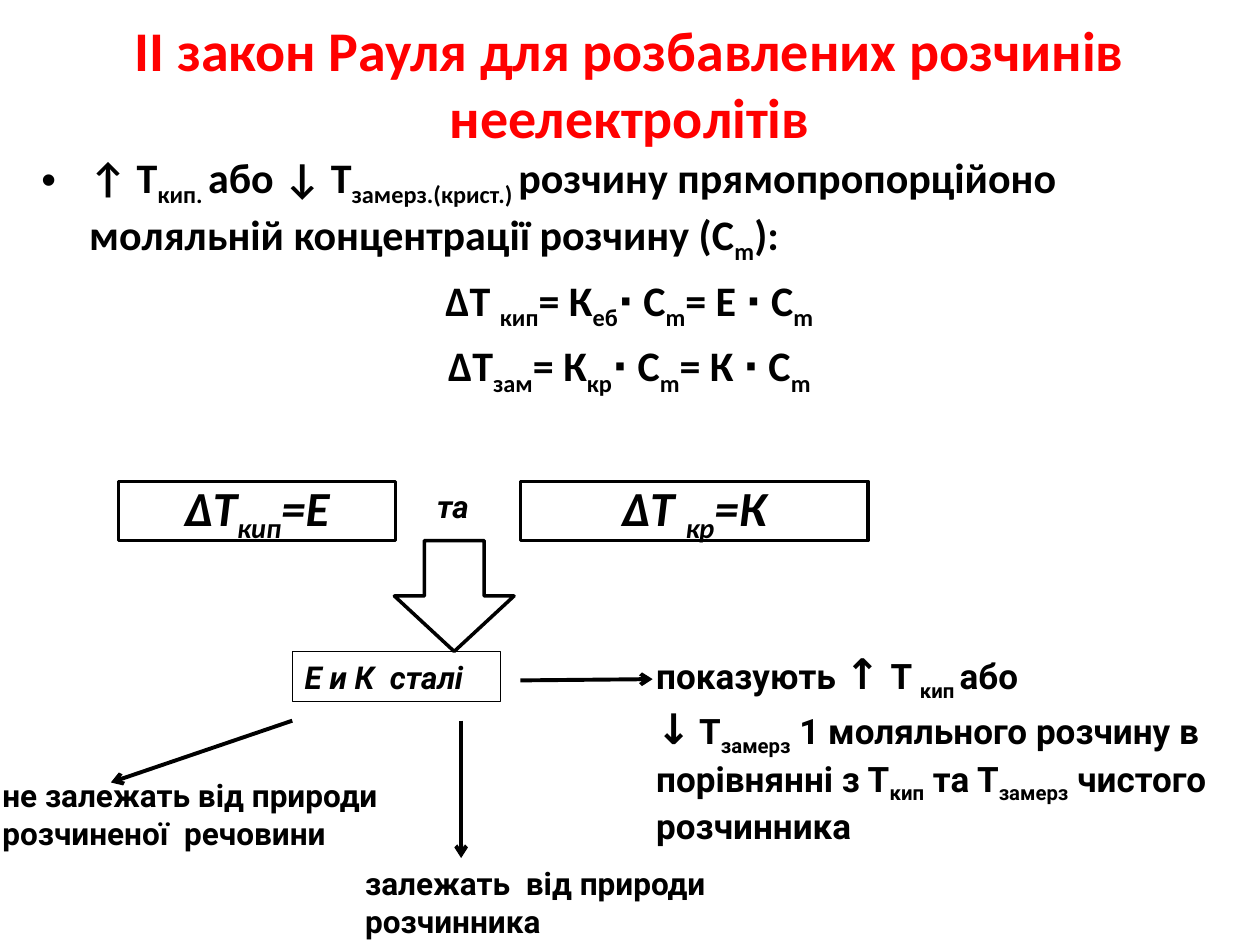
"""Build a slide on the second Raoult law for dilute non-electrolyte solutions."""
from dataclasses import dataclass

from lxml import etree
from pptx import Presentation
from pptx.dml.color import RGBColor
from pptx.enum.shapes import MSO_CONNECTOR, MSO_SHAPE
from pptx.enum.text import MSO_ANCHOR, PP_ALIGN
from pptx.oxml.ns import qn
from pptx.util import Inches, Pt

STRAIGHT = MSO_CONNECTOR.STRAIGHT
RECTANGLE, DOWN_ARROW = MSO_SHAPE.RECTANGLE, MSO_SHAPE.DOWN_ARROW
LEFT, CENTER, JUSTIFY = PP_ALIGN.LEFT, PP_ALIGN.CENTER, PP_ALIGN.JUSTIFY
TOP, MIDDLE = MSO_ANCHOR.TOP, MSO_ANCHOR.MIDDLE
COLORS = {"title": "FF0000", "ink": "000000"}
HEADING_FONT, LABEL_FONT = "Calibri", "Roboto"


@dataclass
class Span:
    text: str
    low: bool = False
    size: float = 0


@dataclass
class Block:
    place: tuple[float, float, float, float]
    paras: list[list[Span]]
    size: float
    font: str = LABEL_FONT
    color: str = "ink"
    italic: bool = False
    align: PP_ALIGN = JUSTIFY
    anchor: MSO_ANCHOR = TOP
    wrap: bool = False
    outline: float = 0
    space_before: float = 0


@dataclass
class Arrow:
    start: tuple[float, float]
    end: tuple[float, float]


def spans(markup: str) -> list[Span]:
    """Split text at bars; every second part is a subscript."""
    return [Span(part, index % 2 == 1)
            for index, part in enumerate(markup.split("|")) if part]


TITLE = Block((0.5, 0.19, 9, 0.93),
              [spans("ІІ закон Рауля для розбавлених розчинів неелектролітів")],
              32, HEADING_FONT, "title", align=CENTER, anchor=MIDDLE, wrap=True)
LAW = Block((0.23, 1.15, 9.53, 1.88), [
    spans("↑ Т|кип. |або ↓ Т|замерз.(крист.) |розчину прямопропорційоно "
          "моляльній концентрації розчину (С|m|):"),
    spans("ΔТ |кип|= К|еб|∙ С|m|= Е ∙ С|m"),
    spans("ΔТ|зам|= К|кр|∙ С|m|= К ∙ С|m"),
], 24, HEADING_FONT, align=CENTER, wrap=True, space_before=4.8)
MEANING = Block((5.11, 5.09, 4.89, 1.58), [
    [Span("показують "), Span("↑ ", size=24), *spans("Т |кип |або")],
    [Span("↓", size=24),
     *spans(" Т|замерз| 1 моляльного розчину в порівнянні з Т|кип| та Т|замерз"
            "| чистого розчинника")],
], 20, align=LEFT, wrap=True)
FORMULAS = [
    Block((left, 3.82, width, 0.47), [spans(markup)], 28, HEADING_FONT,
          italic=True, align=CENTER, anchor=MIDDLE, wrap=True, outline=2)
    for left, width, markup in ((0.94, 2.2, "ΔТ|кип|=Е"), (4.13, 2.76, "ΔТ |кр|=К"))
]
LABELS = [
    Block((2.8, 6.81, 3.27, 0.71),
          [spans("залежать  від природи "), spans("розчинника")], 18),
    Block((-0.08, 6.11, 3.59, 0.71),
          [spans("не залежать від природи "), spans("розчиненої  речовини")], 18),
    Block((2.32, 5.17, 1.65, 0.4), [spans("Е и К  сталі")], 18,
          italic=True, outline=0.75),
    Block((3.37, 3.82, 0.48, 0.4), [spans("та")], 18, italic=True),
]
ARROWS = [
    Arrow((4.13, 5.4), (5.18, 5.39)),
    Arrow((3.66, 5.72), (3.66, 6.81)),
    Arrow((2.32, 5.72), (0.88, 6.21)),
]


def color(name: str) -> RGBColor:
    """Look up a colour by name."""
    return RGBColor.from_string(COLORS[name])


def add_outlined(page, kind: MSO_SHAPE, place: tuple, weight: float):
    """Draw an unfilled shape with a dark outline."""
    shape = page.shapes.add_shape(kind, *map(Inches, place))
    shape.shadow.inherit = False
    shape.fill.background()
    shape.line.color.rgb = color("ink")
    shape.line.width = Pt(weight)
    return shape


def add_block(page, block: Block):
    """Draw a text block, outlined if it has a line weight."""
    if block.outline:
        box = add_outlined(page, RECTANGLE, block.place, block.outline)
    else:
        box = page.shapes.add_textbox(*map(Inches, block.place))
    frame = box.text_frame
    frame.word_wrap = block.wrap
    frame.vertical_anchor = block.anchor
    for index, parts in enumerate(block.paras):
        para = frame.add_paragraph() if index else frame.paragraphs[0]
        para.alignment = block.align
        para.space_before = Pt(block.space_before)
        for part in parts:
            span = para.add_run()
            span.text = part.text
            font = span.font
            font.name = block.font
            font.size = Pt(part.size or block.size)
            font.bold = True
            font.italic = block.italic
            font.color.rgb = color(block.color)
            if part.low:
                font._element.set("baseline", "-25000")
    return box


def add_bullet(para, indent: float) -> None:
    """Give a paragraph a bullet with a hanging indent."""
    para.alignment = LEFT
    props = para._p.get_or_add_pPr()
    props.set("marL", str(Inches(indent)))
    props.set("indent", str(Inches(-indent)))
    etree.SubElement(props, qn("a:buFont"), typeface="Arial")
    etree.SubElement(props, qn("a:buChar"), char="•")


def add_arrow(page, arrow: Arrow) -> None:
    """Draw a straight line with an open arrowhead at its end."""
    line = page.shapes.add_connector(STRAIGHT, *map(Inches, arrow.start + arrow.end))
    line.line.color.rgb = color("ink")
    line.line.width = Pt(2.25)
    etree.SubElement(line.line._get_or_add_ln(), qn("a:tailEnd"), type="arrow")
    etree.SubElement(line._element.spPr, qn("a:effectLst"))


def main() -> None:
    """Build and save the deck."""
    deck = Presentation()
    deck.slide_width, deck.slide_height = Inches(10), Inches(7.5)
    page = deck.slides.add_slide(deck.slide_layouts[6])
    for block in [TITLE, MEANING, *LABELS, *FORMULAS]:
        add_block(page, block)
    for arrow in ARROWS:
        add_arrow(page, arrow)
    add_outlined(page, DOWN_ARROW, (3.13, 4.29, 0.95, 0.88), 2)
    law = add_block(page, LAW)
    add_bullet(law.text_frame.paragraphs[0], 0.38)
    deck.save("out.pptx")


if __name__ == "__main__":
    main()
